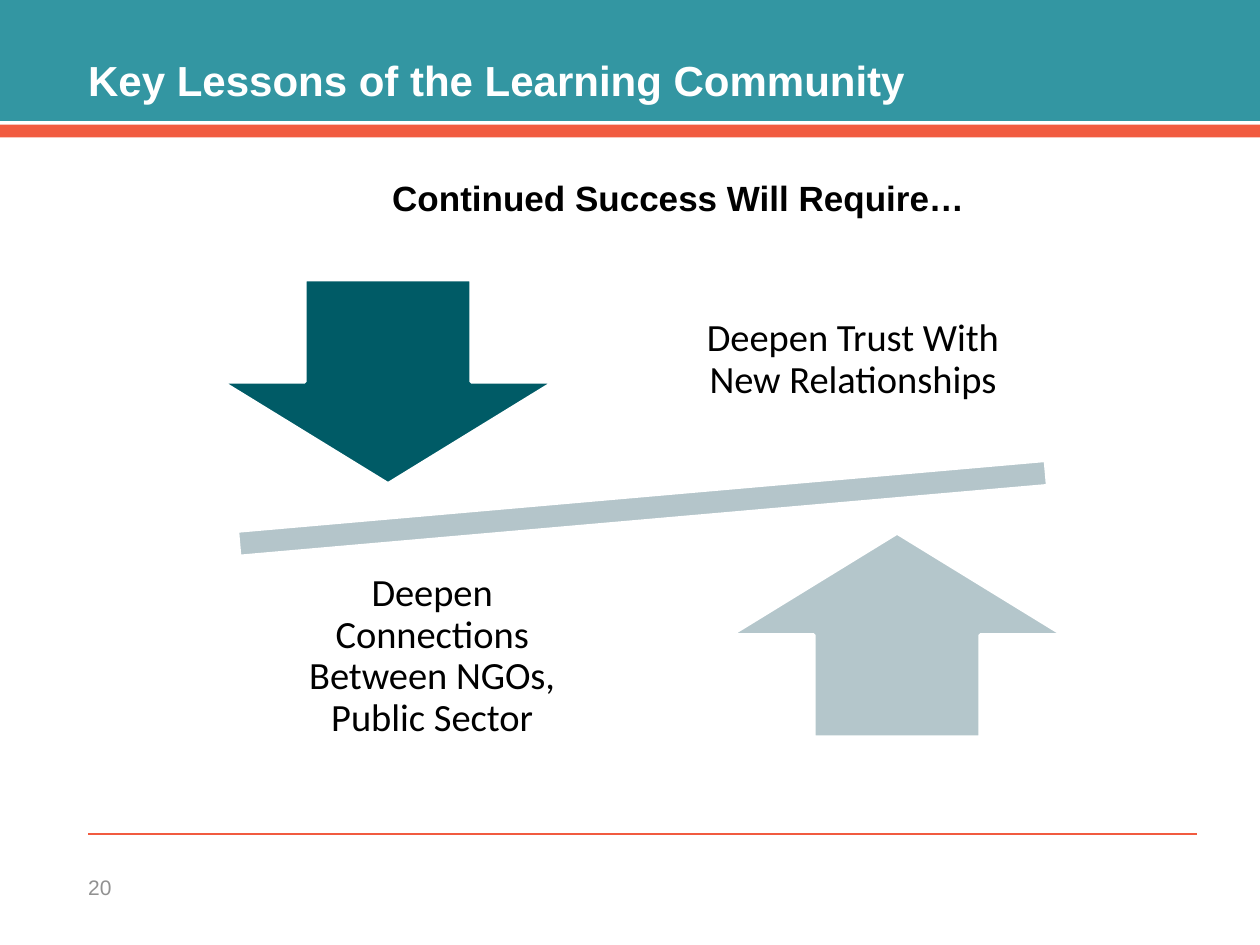
import pptx
import pptx.util
import pptx.dml.color
import pptx.enum.shapes
import pptx.enum.text
import lxml.etree
from dataclasses import dataclass
from pptx.util import Inches

SHAPE = pptx.enum.shapes.MSO_SHAPE
ALIGN = pptx.enum.text.PP_ALIGN
ANCHOR = pptx.enum.text.MSO_ANCHOR


@dataclass(frozen=True)
class Theme:
    """Colours, fonts and type sizes of the slide."""
    teal: str = "007C8B"
    dark_teal: str = "005B66"
    orange: str = "F15B40"
    bar: str = "B4C5CA"
    pale: str = "B4C6CB"
    white: str = "FFFFFF"
    black: str = "000000"
    grey: str = "919191"
    sans: str = "Arial"
    label_font: str = "Calibri"
    title: int = 24
    label: int = 22
    heading: int = 20
    number: int = 12


THEME = Theme()


def rgb(value):
    """Return a colour object for a hex string."""
    return pptx.dml.color.RGBColor.from_string(value)


def add_block(slide, kind, box, fill, outline=None, alpha=None):
    """Add a filled preset shape with an optional outline and opacity in percent."""
    sp = slide.shapes.add_shape(kind, *map(Inches, box))
    sp.shadow.inherit = False
    sp.fill.solid()
    sp.fill.fore_color.rgb = rgb(fill)
    if alpha is not None:
        clr = sp.fill._xPr.find(".//" + pptx.oxml.ns.qn("a:srgbClr"))
        lxml.etree.SubElement(clr, pptx.oxml.ns.qn("a:alpha"), val=str(alpha * 1000))
    if outline:
        sp.line.color.rgb = rgb(outline)
        sp.line.width = pptx.util.Pt(2)
    else:
        sp.line.fill.background()
    return sp


def add_text(slide, box, text, size, color, font=THEME.sans, bold=False,
             align=ALIGN.LEFT, anchor=ANCHOR.TOP, inset=0):
    """Add a wrapped one-paragraph text box and return its paragraph."""
    tf = slide.shapes.add_textbox(*map(Inches, box)).text_frame
    tf.word_wrap = True
    tf.vertical_anchor = anchor
    tf.margin_left = tf.margin_right = tf.margin_top = tf.margin_bottom = Inches(inset)
    p = tf.paragraphs[0]
    p.text = text
    p.alignment = align
    p.font.name = font
    p.font.size = pptx.util.Pt(size)
    p.font.bold = bold
    p.font.color.rgb = rgb(color)
    return p


def add_header(slide, box, title):
    """Add the title band with its orange stripe."""
    x, y, w, h = box
    add_block(slide, SHAPE.RECTANGLE, (x, y, w, h - 0.13), THEME.teal, alpha=80)
    add_block(slide, SHAPE.RECTANGLE, (x, y + h - 0.1, w, 0.1), THEME.orange)
    add_text(slide, (x + 0.7, y + 0.43, w - 1.2, 0.48), title,
             THEME.title, THEME.white, bold=True)


def add_footer(slide, box, number):
    """Add the footer rule and the page number."""
    x, y, w, h = box
    rule = slide.shapes.add_connector(pptx.enum.shapes.MSO_CONNECTOR.STRAIGHT,
                                      *map(Inches, (x, y, x + w, y)))
    rule.line.color.rgb = rgb(THEME.orange)
    rule.line.width = pptx.util.Pt(1)
    lxml.etree.SubElement(rule._element.spPr, pptx.oxml.ns.qn("a:effectLst"))
    add_text(slide, (x, y + h - 0.4, 0.5, 0.4), number,
             THEME.number, THEME.grey, anchor=ANCHOR.MIDDLE)


def add_balance(slide, box, upper, lower):
    """Add a tilted bar with opposing arrows and a label beside each."""
    x, y, w, h = box
    arrow_w, arrow_h, label_w, label_h = 2.64, 1.62, 2.82, 1.7
    bar_h = 0.86
    bar = add_block(slide, SHAPE.MATH_MINUS, (x, y + (h - bar_h) / 2, w, bar_h),
                    THEME.bar, THEME.white)
    bar.rotation = 355
    arrow_top, label_top = y + 0.21, y
    arrow_in, label_in = 1.04, 1.3
    halves = (
        (SHAPE.DOWN_ARROW, THEME.dark_teal, x + arrow_in, arrow_top,
         upper, x + w - label_in - label_w, label_top),
        (SHAPE.UP_ARROW, THEME.pale, x + w - arrow_in - arrow_w,
         y + h - 0.21 - arrow_h, lower, x + label_in, y + h - label_h),
    )
    for kind, fill, arrow_x, arrow_y, text, label_x, label_y in halves:
        add_block(slide, kind, (arrow_x, arrow_y, arrow_w, arrow_h), fill, THEME.white)
        p = add_text(slide, (label_x, label_y, label_w, label_h), text,
                     THEME.label, THEME.black, THEME.label_font,
                     align=ALIGN.CENTER, anchor=ANCHOR.MIDDLE, inset=0.17)
        p.line_spacing = 0.9


def main():
    """Build and save the slide."""
    prs = pptx.Presentation()
    prs.slide_width, prs.slide_height = Inches(10), Inches(7.5)
    slide = prs.slides.add_slide(prs.slide_layouts[6])
    add_header(slide, (0, 0, 10, 1.09), "Key Lessons of the Learning Community")
    add_footer(slide, (0.7, 6.62, 8.8, 0.62), "20")
    add_balance(slide, (0.72, 2.01, 8.76, 4.05), "Deepen Trust With New Relationships",
                "Deepen Connections Between NGOs, Public Sector")
    add_text(slide, (2.77, 1.4, 5.23, 0.47), "Continued Success Will Require…",
             THEME.heading, THEME.black, bold=True, align=ALIGN.CENTER)
    prs.save("out.pptx")


if __name__ == "__main__":
    main()
